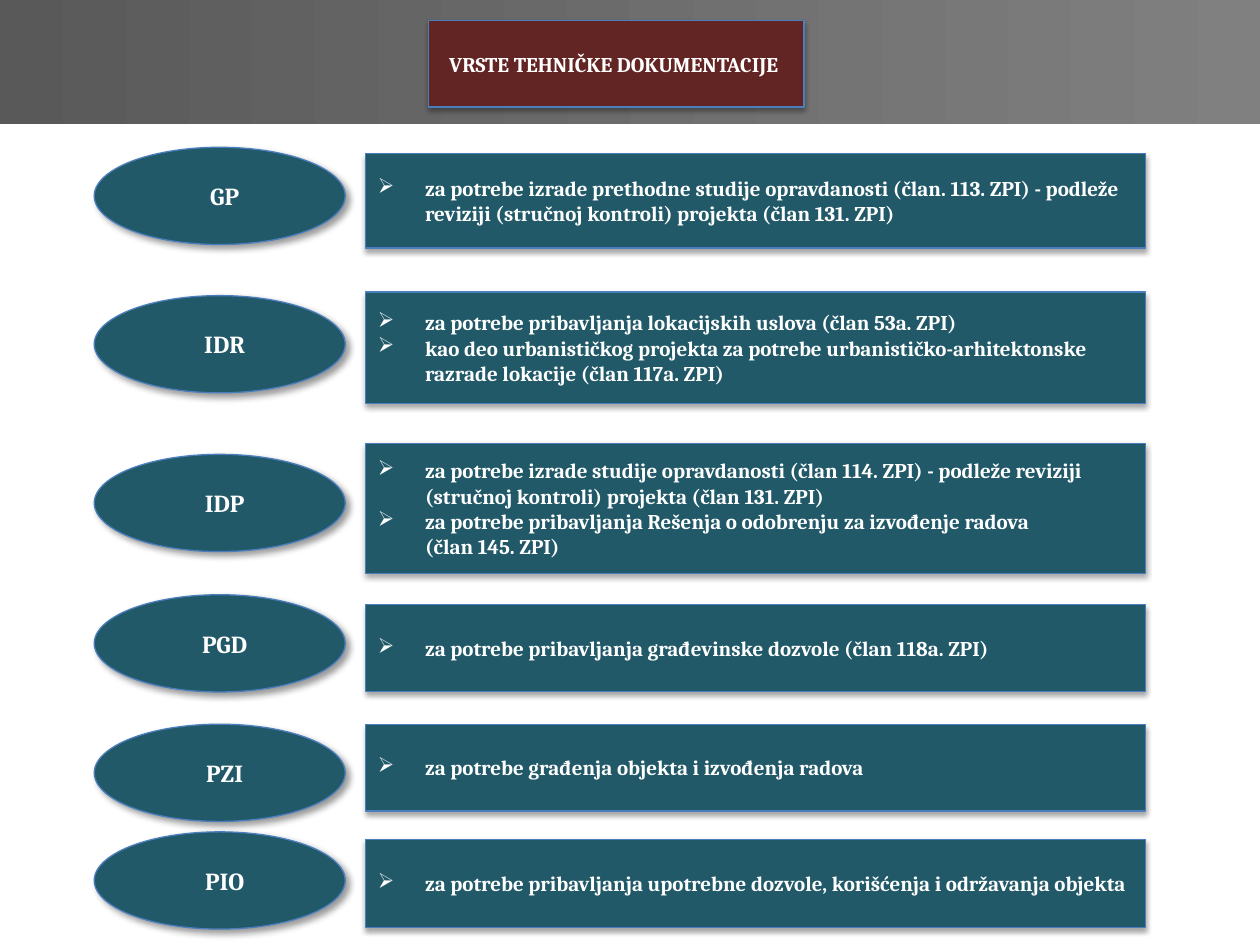
from pptx import Presentation
from pptx import util as u
from pptx.dml.color import RGBColor
from pptx.enum import shapes, text
from pptx.oxml import parse_xml
from pptx.oxml.ns import nsdecls

TITLE = "VRSTE TEHNIČKE DOKUMENTACIJE"
ROWS = [
    ("GP", 2.97, 3.1, 1.9, [
        "za potrebe izrade prethodne studije opravdanosti (član. 113. ZPI) - podleže reviziji (stručnoj kontroli) projekta (član 131. ZPI)"]),
    ("IDR", 5.96, 5.89, 2.24, [
        "za potrebe pribavljanja lokacijskih uslova (član 53a. ZPI)",
        "kao deo urbanističkog projekta za potrebe urbanističko-arhitektonske razrade lokacije (član 117a. ZPI)"]),
    ("IDP", 9.16, 8.94, 2.62, [
        "za potrebe izrade studije opravdanosti (član 114. ZPI) - podleže reviziji (stručnoj kontroli) projekta (član 131. ZPI)",
        "za potrebe pribavljanja Rešenja o odobrenju za izvođenje radova\v(član 145. ZPI)"]),
    ("PGD", 11.99, 12.19, 1.75, [
        "za potrebe pribavljanja građevinske dozvole (član 118a. ZPI)"]),
    ("PZI", 14.6, 14.6, 1.75, [
        "za potrebe građenja objekta i izvođenja radova"]),
    ("PIO", 16.77, 16.92, 1.78, [
        "za potrebe pribavljanja upotrebne dozvole, korišćenja i održavanja objekta"]),
]
THEME = dict(font="Cambria", ink="FFFFFF", teal="215968", wine="632523",
             edge="4B7EBC", dark="595959", light="808080", body=12, label=14)
WIDE, HIGH, BAND = 25.4, 19.05, 2.51
OVAL = dict(left=1.9, width=5.06, height=1.96)
BOX = dict(left=7.37, width=15.72)
SOFT = dict(blur=3.1, dist=1.8, turn=90, alpha=35)
DEEP = dict(blur=4, dist=3, turn=45, alpha=40)


def color(name):
    return RGBColor.from_string(THEME[name])


def shade(shape, blur, dist, turn, alpha):
    shape.shadow.inherit = False
    props = shape.fill._xPr
    old = props.find("{*}effectLst")
    props.replace(old, parse_xml(
        f'<a:effectLst {nsdecls("a")}><a:outerShdw blurRad="{u.Pt(blur)}" '
        f'dist="{u.Pt(dist)}" dir="{turn * 60000}" rotWithShape="0">'
        f'<a:srgbClr val="000000"><a:alpha val="{alpha * 1000}"/></a:srgbClr>'
        f'</a:outerShdw></a:effectLst>'))


def bullet(para):
    props = para._p.get_or_add_pPr()
    props.set("marL", str(u.Cm(0.95)))
    props.set("indent", str(-u.Cm(0.95)))
    props.append(parse_xml(f'<a:buChar {nsdecls("a")} char="➢"/>'))


def write(shape, lines, size="body", listed=False, left=0.25, right=0.25):
    frame = shape.text_frame
    frame.word_wrap = True
    frame.vertical_anchor = text.MSO_ANCHOR.MIDDLE
    frame.margin_left, frame.margin_right = u.Cm(left), u.Cm(right)
    for i, line in enumerate(lines):
        para = frame.add_paragraph() if i else frame.paragraphs[0]
        para.text = line
        if listed:
            para.alignment = text.PP_ALIGN.LEFT
            bullet(para)
        else:
            para.alignment = text.PP_ALIGN.CENTER
            para.space_after = u.Pt(6)
        for run in para.runs:
            font = run.font
            font.name, font.size, font.bold = THEME["font"], u.Pt(THEME[size]), True
            font.color.rgb = color("ink")


def panel(slide, kind, left, top, width, height, fill, cast):
    shape = slide.shapes.add_shape(
        kind, u.Cm(left), u.Cm(top), u.Cm(width), u.Cm(height))
    shape.fill.solid()
    shape.fill.fore_color.rgb = color(fill)
    shape.line.color.rgb = color("edge")
    shape.line.width = u.Pt(0.75)
    shade(shape, **cast)
    return shape


def header(slide):
    band = slide.shapes.add_shape(
        shapes.MSO_SHAPE.RECTANGLE, 0, 0, u.Cm(WIDE), u.Cm(BAND))
    band.shadow.inherit = False
    band.line.fill.background()
    band.fill.gradient()
    band.fill.gradient_angle = 0
    for stop, name, place in zip(band.fill.gradient_stops, ("dark", "light"), (0, 1)):
        stop.color.rgb = color(name)
        stop.position = place


def main():
    deck = Presentation()
    deck.slide_width, deck.slide_height = u.Cm(WIDE), u.Cm(HIGH)
    slide = deck.slides.add_slide(deck.slide_layouts[6])
    rect, oval = shapes.MSO_SHAPE.RECTANGLE, shapes.MSO_SHAPE.OVAL
    header(slide)
    for label, high, top, height, lines in ROWS:
        mark = panel(slide, oval, top=high, fill="teal", cast=DEEP, **OVAL)
        write(mark, [label], size="label", left=0.45)
        box = panel(slide, rect, top=top, height=height, fill="teal", cast=SOFT, **BOX)
        write(box, lines, listed=True)
    title = panel(slide, rect, 8.64, 0.41, 7.57, 1.75, "wine", SOFT)
    write(title, [TITLE], right=0.35)
    deck.save("out.pptx")


if __name__ == "__main__":
    main()
